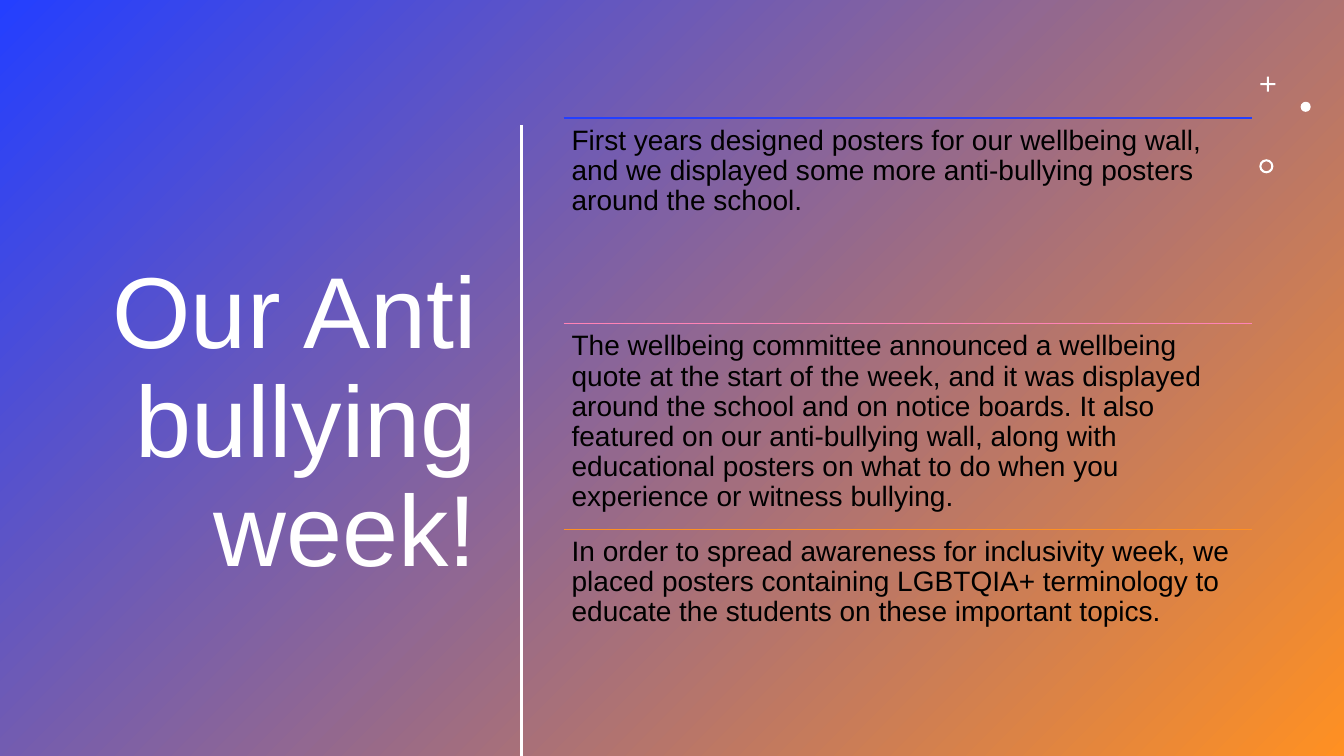
from lxml.etree import SubElement
from pptx import Presentation
from pptx.dml.color import RGBColor
from pptx.enum.shapes import MSO_CONNECTOR, MSO_SHAPE
from pptx.enum.text import MSO_ANCHOR, MSO_AUTO_SIZE, PP_ALIGN
from pptx.oxml.ns import qn
from pptx.util import Inches, Pt

BLUE, PINK, ORANGE, WHITE, BLACK = "243FFF", "FF83B6", "FF9022", "FFFFFF", "000000"


def add_rule(x1, y1, x2, y2, color, width):
    rule = slide.shapes.add_connector(
        MSO_CONNECTOR.STRAIGHT, Inches(x1), Inches(y1), Inches(x2), Inches(y2))
    rule.line.color.rgb = RGBColor.from_string(color)
    rule.line.width = Pt(width)
    SubElement(rule.element.spPr, qn("a:effectLst"))


def write(frame, text, size, color, align):
    frame.word_wrap = True
    frame.auto_size = MSO_AUTO_SIZE.NONE
    paragraph = frame.paragraphs[0]
    paragraph.alignment = align
    paragraph.line_spacing = 0.9
    run = paragraph.add_run()
    run.text = text
    run.font.name = "Arial"
    run.font.size = Pt(size)
    run.font.color.rgb = RGBColor.from_string(color)


prs = Presentation()
prs.slide_width, prs.slide_height = Inches(13.33), Inches(7.5)
slide = prs.slides.add_slide(prs.slide_layouts[5])

heading = slide.shapes.title
heading.left, heading.top = Inches(0.52), Inches(1.16)
heading.width, heading.height = Inches(4.31), Inches(6.11)
heading.text_frame.vertical_anchor = MSO_ANCHOR.MIDDLE
write(heading.text_frame, "Our Anti bullying week!", 72, WHITE, PP_ALIGN.RIGHT)

backdrop = slide.shapes.add_shape(
    MSO_SHAPE.RECTANGLE, 0, 0, prs.slide_width, prs.slide_height)
backdrop.shadow.inherit = False
backdrop.line.fill.background()
backdrop.fill.gradient()
backdrop.fill.gradient_angle = 315
for stop, color in zip(backdrop.fill.gradient_stops, (BLUE, ORANGE)):
    stop.color.rgb = RGBColor.from_string(color)
heading.element.addprevious(backdrop.element)

ornaments = [
    (MSO_SHAPE.CROSS, 12.5, 0.76, 0.15, 0.43),
    (MSO_SHAPE.OVAL, 12.9, 1.01, 0.1, None),
    (MSO_SHAPE.DONUT, 12.49, 1.58, 0.14, 0.15),
]
for preset, x, y, size, adjustment in ornaments:
    ornament = slide.shapes.add_shape(
        preset, Inches(x), Inches(y), Inches(size), Inches(size))
    ornament.shadow.inherit = False
    ornament.fill.solid()
    ornament.fill.fore_color.rgb = RGBColor.from_string(WHITE)
    ornament.line.fill.background()
    if adjustment:
        ornament.adjustments[0] = adjustment

add_rule(5.17, 1.24, 5.17, 7.5, WHITE, 2)

activities = [
    (BLUE, "First years designed posters for our wellbeing wall, and we displayed "
           "some more anti-bullying posters around the school."),
    (PINK, "The wellbeing committee announced a wellbeing quote at the start of the "
           "week, and it was displayed around the school and on notice boards. It also "
           "featured on our anti-bullying wall, along with educational posters on what "
           "to do when you experience or witness bullying."),
    (ORANGE, "In order to spread awareness for inclusivity week, we placed posters "
             "containing LGBTQIA+ terminology to educate the students on these "
             "important topics."),
]
left, top, width, pitch = 5.59, 1.17, 6.83, 2.04
for row, (color, activity) in enumerate(activities):
    y = top + row * pitch
    add_rule(left, y, left + width, y, color, 1)
    entry = slide.shapes.add_textbox(
        Inches(left), Inches(y), Inches(width), Inches(pitch)).text_frame
    entry.margin_left = entry.margin_right = Inches(0.08)
    entry.margin_top = entry.margin_bottom = Inches(0.08)
    write(entry, activity, 20, BLACK, PP_ALIGN.LEFT)

prs.save("out.pptx")
